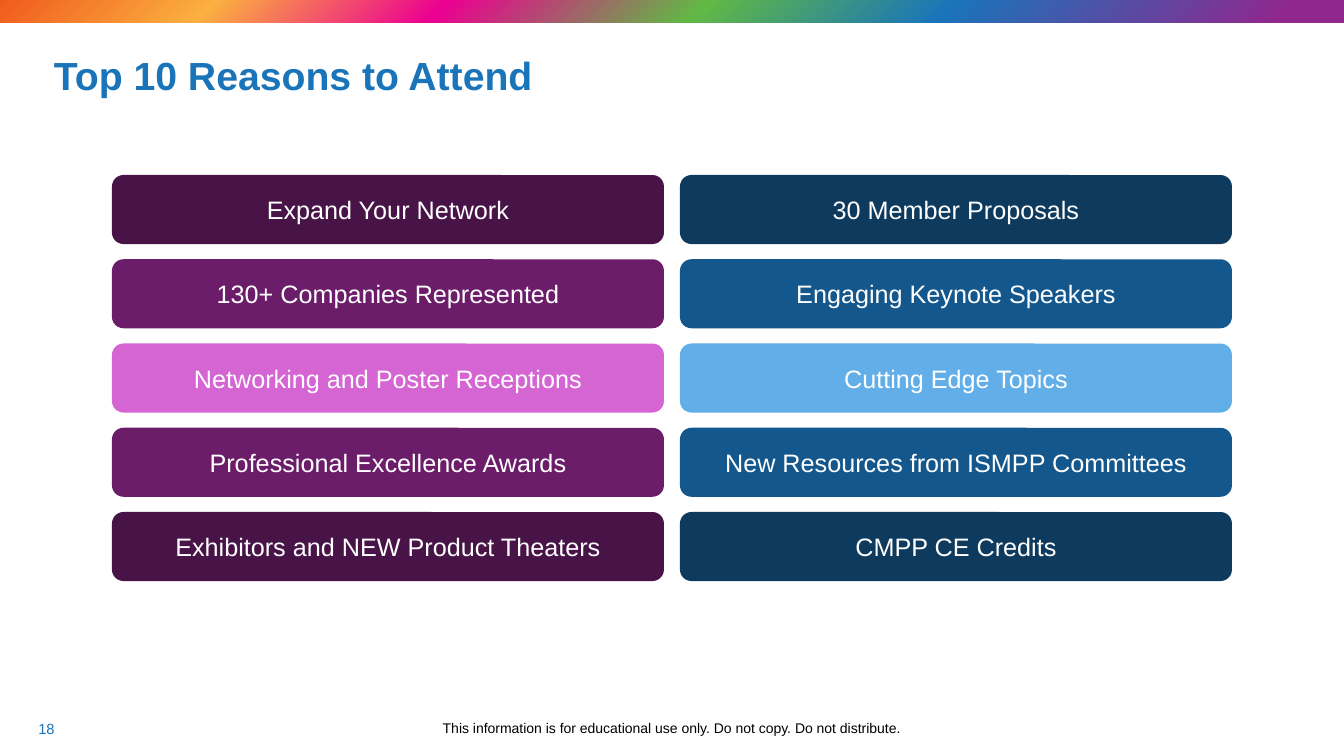
from copy import deepcopy

from pptx import Presentation
from pptx import util as u
from pptx.dml.color import RGBColor
from pptx.enum import shapes, text
from pptx.oxml.ns import qn

EMU_PER_PX = 914400 / 100.8
COLORS = {
    "white": "FFFFFF", "black": "000000", "blue": "1A74BA",
    "plum_dark": "481447", "plum": "6C1D6A", "plum_light": "D565D3",
    "navy_dark": "0D3A5D", "navy": "13578C", "navy_light": "62AEE9",
}
RAINBOW = [(0, "F05A1D"), (16, "FBB040"), (33, "EB0091"),
           (52, "61B945"), (70, "1A74BA"), (95, "90278E")]


def px(*lengths):
    return [u.Emu(round(length * EMU_PER_PX)) for length in lengths]


def write(shape, words, size, color, align, anchor, bold=False):
    frame = shape.text_frame
    frame.word_wrap = True
    frame.vertical_anchor = anchor
    paragraph = frame.paragraphs[0]
    paragraph.alignment = align
    run = paragraph.add_run()
    run.text = words
    for name, value in {"name": "Arial", "size": u.Pt(size), "bold": bold}.items():
        setattr(run.font, name, value)
    run.font.color.rgb = RGBColor.from_string(COLORS[color])


prs = Presentation()
prs.slide_width, prs.slide_height = px(1344, 756)
slide = prs.slides.add_slide(prs.slide_layouts[6])
LEFT, CENTER = text.PP_ALIGN.LEFT, text.PP_ALIGN.CENTER
TOP, MIDDLE = text.MSO_ANCHOR.TOP, text.MSO_ANCHOR.MIDDLE

# Rainbow band along the top edge
band = slide.shapes.add_shape(shapes.MSO_SHAPE.RECTANGLE, *px(-1, -1, 1346, 24))
band.shadow.inherit = False
band.line.fill.background()
band.fill.gradient()
band.fill.gradient_angle = 315
stop_list = next(band._element.spPr.iter(qn("a:gsLst")))
first_stop = stop_list[0]
for old_stop in list(stop_list):
    stop_list.remove(old_stop)
for _ in RAINBOW:
    stop_list.append(deepcopy(first_stop))
for stop, (percent, color) in zip(band.fill.gradient_stops, RAINBOW):
    stop.position = percent / 100
    stop.color.rgb = RGBColor.from_string(color)

# Title, page number and usage notice
for box, words, size, color, align, anchor, bold in [
    ((44, 21, 995, 108), "Top 10 Reasons to Attend", 28, "blue", LEFT, MIDDLE, True),
    ((24, 715, 45, 40), "18", 10.5, "blue", CENTER, TOP, False),
    ((38, 715, 1267, 40),
     "This information is for educational use only. Do not copy. Do not distribute.",
     10, "black", CENTER, TOP, False),
]:
    write(slide.shapes.add_textbox(*px(*box)), words, size, color, align, anchor, bold)

# Ten reasons: two columns, shaded dark to light and back
GRID_TOP, GRID_HEIGHT, REASON_WIDTH, REASON_HEIGHT = 175, 406, 552, 69
columns = [
    (112, ["plum_dark", "plum", "plum_light", "plum", "plum_dark"],
     ["Expand Your Network", "130+ Companies Represented",
      "Networking and Poster Receptions", "Professional Excellence Awards",
      "Exhibitors and NEW Product Theaters"]),
    (680, ["navy_dark", "navy", "navy_light", "navy", "navy_dark"],
     ["30 Member Proposals", "Engaging Keynote Speakers", "Cutting Edge Topics",
      "New Resources from ISMPP Committees", "CMPP CE Credits"]),
]
for left, shades, reasons in columns:
    pitch = (GRID_HEIGHT - REASON_HEIGHT) / (len(reasons) - 1)
    for row, (shade, reason) in enumerate(zip(shades, reasons)):
        tile = slide.shapes.add_shape(
            shapes.MSO_SHAPE.ROUNDED_RECTANGLE,
            *px(left, GRID_TOP + row * pitch, REASON_WIDTH, REASON_HEIGHT))
        tile.shadow.inherit = False
        tile.line.fill.background()
        tile.fill.solid()
        tile.fill.fore_color.rgb = RGBColor.from_string(COLORS[shade])
        write(tile, reason, 18, "white", CENTER, MIDDLE)

prs.save("out.pptx")
